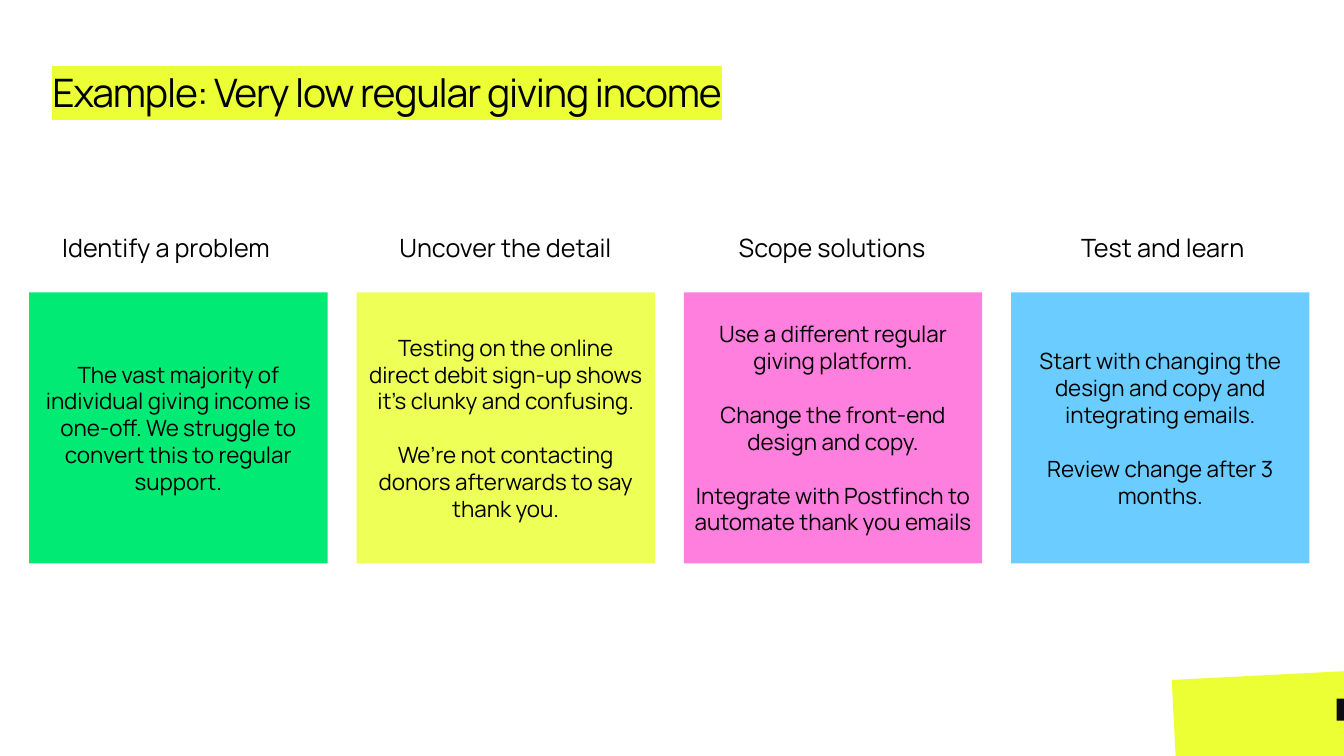
from lxml import etree
from pptx import Presentation
from pptx import util as u
from pptx.dml.color import RGBColor
from pptx.enum import shapes, text
from pptx.oxml.ns import qn

COLOURS = {"ink": "000000", "tab": "0D0D0D", "lime": "EBFF34", "green": "01EB74",
           "yellow": "EEFF57", "pink": "FF7FDE", "blue": "6BCDFF"}
FONT = "Manrope"
CENTRE, LEFT = text.PP_ALIGN.CENTER, text.PP_ALIGN.LEFT
CARD_LEFT, CARD_TOP, CARD_WIDTH, CARD_HEIGHT, CARD_PITCH = 20.9, 208.8, 213.1, 193.7, 233.8
HEADING_TOP, HEADING_HEIGHT = 162.7, 28.8
STEPS = [
    ("Identify a problem", 37.4, 180, LEFT, "green",
     ["The vast majority of individual giving income is one-off. "
      "We struggle to convert this to regular support."]),
    ("Uncover the detail", 264.2, 193.7, CENTRE, "yellow",
     ["Testing on the online direct debit sign-up shows it’s clunky and confusing.",
      "We’re not contacting donors afterwards to say thank you."]),
    ("Scope solutions", 497.5, 193.7, CENTRE, "pink",
     ["Use a different regular giving platform.",
      "Change the front-end design and copy.",
      "Integrate with Postfinch to automate thank you emails"]),
    ("Test and learn", 745.9, 169.2, CENTRE, "blue",
     ["Start with changing the design and copy and integrating emails.",
      "Review change after 3 months."]),
]


def colour(name):
    """Return the named colour."""
    return RGBColor.from_string(COLOURS[name])


def write(para, words, size, align=CENTRE, before=0, spacing=1.0):
    """Write words into a paragraph with the given format and return the run."""
    para.alignment = align
    para.space_before = u.Pt(before)
    para.line_spacing = spacing
    span = para.add_run()
    span.text = words
    span.font.name = FONT
    span.font.size = u.Pt(size)
    span.font.color.rgb = colour("ink")
    return span


class SlideBuilder:
    """Hold the deck style and the current page."""

    def __init__(self, deck):
        """Open a page with a title."""
        self.page = deck.slides.add_slide(deck.slide_layouts[5])

    def title(self, words, left, top, width, height):
        """Place the highlighted title."""
        box = self.page.shapes.title
        box.left, box.top, box.width, box.height = map(u.Pt, (left, top, width, height))
        frame = box.text_frame
        frame.word_wrap = True
        frame.auto_size = text.MSO_AUTO_SIZE.NONE
        frame.vertical_anchor = text.MSO_ANCHOR.MIDDLE
        frame.margin_left = frame.margin_bottom = 0
        frame.margin_top, frame.margin_right = u.Pt(3.6), u.Pt(7.2)
        span = write(frame.paragraphs[0], words, 28, LEFT, spacing=1.3)
        props = span.font._element
        props.set("spc", "-80")
        mark = etree.Element(qn("a:highlight"))
        etree.SubElement(mark, qn("a:srgbClr"), val=COLOURS["lime"])
        props.find(qn("a:solidFill")).addnext(mark)

    def block(self, fill, left, top, width, height, turn=0):
        """Place a plain filled rectangle."""
        box = self.page.shapes.add_shape(shapes.MSO_SHAPE.RECTANGLE,
                                         *map(u.Pt, (left, top, width, height)))
        box.shadow.inherit = False
        box.fill.solid()
        box.fill.fore_color.rgb = colour(fill)
        box.line.fill.background()
        box.rotation = turn
        return box

    def card(self, fill, paragraphs, left):
        """Place a coloured card with its paragraphs."""
        frame = self.block(fill, left, CARD_TOP, CARD_WIDTH, CARD_HEIGHT).text_frame
        frame.word_wrap = True
        frame.vertical_anchor = text.MSO_ANCHOR.MIDDLE
        for index, words in enumerate(paragraphs):
            para = frame.add_paragraph() if index else frame.paragraphs[0]
            write(para, words, 16, before=19.2 if index else 0)

    def heading(self, words, left, width, align):
        """Place the heading above a card."""
        box = self.page.shapes.add_textbox(
            *map(u.Pt, (left, HEADING_TOP, width, HEADING_HEIGHT)))
        box.text_frame.word_wrap = True
        write(box.text_frame.paragraphs[0], words, 18, align)


def main():
    """Build and save the deck."""
    deck = Presentation()
    deck.slide_width, deck.slide_height = u.Pt(960), u.Pt(540)
    builder = SlideBuilder(deck)
    builder.block("lime", 838.8, 482.4, 126.7, 73.4, turn=357.1)
    builder.block("tab", 954.7, 499, 5.3, 15.8)
    builder.title("Example: Very low regular giving income", 37.4, 36.7, 535, 44.6)
    for index, (heading, left, width, align, fill, paragraphs) in enumerate(STEPS):
        builder.card(fill, paragraphs, CARD_LEFT + index * CARD_PITCH)
        builder.heading(heading, left, width, align)
    deck.save("out.pptx")


if __name__ == "__main__":
    main()
